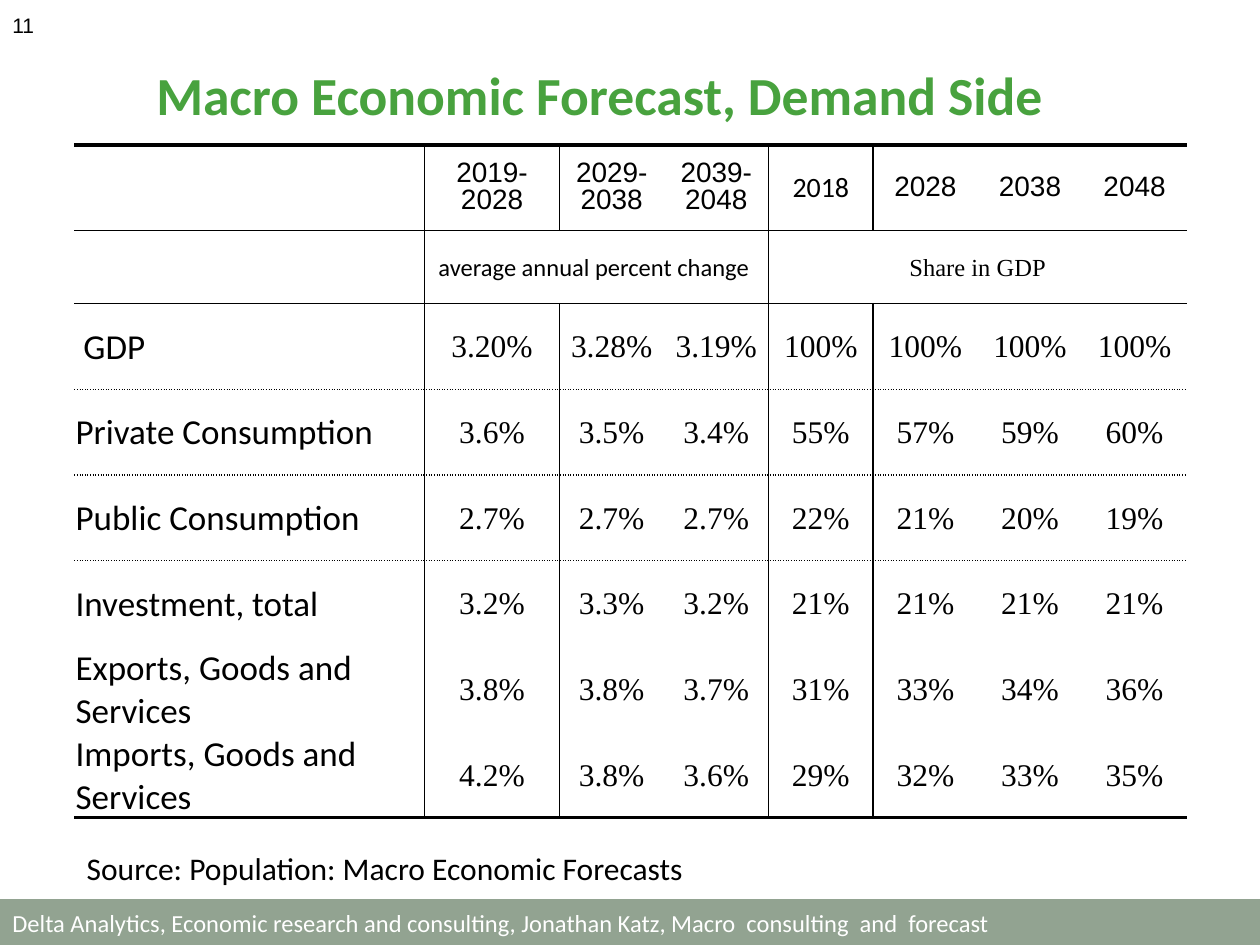
from lxml import etree
from pptx import Presentation
from pptx import util as u
from pptx.dml.color import RGBColor
from pptx.enum import shapes, text
from pptx.oxml.ns import qn

COLORS = {"ink": "000000", "title": "48A23E", "band": "92A391", "paper": "FFFFFF"}
SANS, SERIF = "Calibri", "Times New Roman"
NO_STYLE = "{2D5ABB26-0587-4C30-8999-92F81FD0307C}"
LEFT, CENTER = text.PP_ALIGN.LEFT, text.PP_ALIGN.CENTER

COLUMN_WIDTHS = [2.78, 1.07] + [0.83] * 6
ROW_HEIGHTS = [0.68, 0.58] + [0.68] * 6
PERIODS = ["2019-2028", "2029-2038", "2039-2048", "2018", "2028", "2038", "2048"]
FORECAST = [
    [" GDP", "3.20%", "3.28%", "3.19%", "100%", "100%", "100%", "100%"],
    ["Private Consumption", "3.6%", "3.5%", "3.4%", "55%", "57%", "59%", "60%"],
    ["Public Consumption", "2.7%", "2.7%", "2.7%", "22%", "21%", "20%", "19%"],
    ["Investment, total", "3.2%", "3.3%", "3.2%", "21%", "21%", "21%", "21%"],
    ["Exports, Goods and Services", "3.8%", "3.8%", "3.7%", "31%", "33%", "34%", "36%"],
    ["Imports, Goods and Services", "4.2%", "3.8%", "3.6%", "29%", "32%", "33%", "35%"],
]
# Horizontal rules by their position between rows: (points, dash)
RULES = {0: (2.25, "solid"), 1: (1, "solid"), 2: (1, "solid"),
         3: (1, "sysDot"), 4: (1, "sysDot"), 8: (2.25, "solid")}
DIVIDERS = {1, 4}


class ForecastSlide:
    def __init__(self, presentation):
        self.width = presentation.slide_width
        self.height = presentation.slide_height
        self.slide = presentation.slides.add_slide(presentation.slide_layouts[5])

    def box(self, left, top, width, height):
        """Turn shares of the slide's size into lengths."""
        return (int(left * self.width), int(top * self.height),
                int(width * self.width), int(height * self.height))

    def set_text(self, frame, content, size, font=SANS, color="ink", align=LEFT,
                 bold=False, right_to_left=False):
        frame.text = content
        paragraph = frame.paragraphs[0]
        paragraph.alignment = align
        for run in paragraph.runs:
            run.font.size = u.Pt(size)
            run.font.name = font
            run.font.bold = bold
            run.font.color.rgb = RGBColor.from_string(COLORS[color])
            if right_to_left:
                etree.SubElement(run.font._element, qn("a:cs"), typeface="Arial")
        if right_to_left:
            paragraph._p.get_or_add_pPr().set("rtl", "1")

    def title(self, content, *place):
        shape = self.slide.shapes.title
        shape.left, shape.top, shape.width, shape.height = self.box(*place)
        shape.text_frame.vertical_anchor = text.MSO_ANCHOR.MIDDLE
        self.set_text(shape.text_frame, content, 30.6, color="title", bold=True)

    def label(self, content, size, *place, anchor=text.MSO_ANCHOR.TOP, **style):
        frame = self.slide.shapes.add_textbox(*self.box(*place)).text_frame
        frame.word_wrap = True
        frame.vertical_anchor = anchor
        self.set_text(frame, content, size, **style)

    def band(self, content, *place):
        shape = self.slide.shapes.add_shape(shapes.MSO_SHAPE.RECTANGLE, *self.box(*place))
        shape.shadow.inherit = False
        shape.fill.solid()
        shape.fill.fore_color.rgb = RGBColor.from_string(COLORS["band"])
        shape.line.color.rgb = RGBColor.from_string(COLORS["band"])
        shape.line.width = u.Pt(2)
        shape.text_frame.vertical_anchor = text.MSO_ANCHOR.MIDDLE
        self.set_text(shape.text_frame, content, 14, color="paper")

    def table(self, *place):
        frame = self.slide.shapes.add_table(
            len(ROW_HEIGHTS), len(COLUMN_WIDTHS), *self.box(*place))
        table = frame.table
        table.first_row = table.horz_banding = False
        frame._element.xpath(".//a:tableStyleId")[0].text = NO_STYLE
        for column, width in zip(table.columns, COLUMN_WIDTHS):
            column.width = u.Inches(width)
        for row, height in zip(table.rows, ROW_HEIGHTS):
            row.height = u.Inches(height)
        for row in range(len(ROW_HEIGHTS)):
            for column in range(len(COLUMN_WIDTHS)):
                self.format_cell(table.cell(row, column), row, column)
        return table

    def format_cell(self, cell, row, column):
        cell.vertical_anchor = text.MSO_ANCHOR.MIDDLE
        cell.margin_left = cell.margin_right = cell.margin_top = u.Inches(0.01)
        cell.margin_bottom = 0
        if 2 <= row <= 3 and column >= 5:
            cell.fill.solid()
            cell.fill.fore_color.rgb = RGBColor.from_string(COLORS["paper"])
        else:
            cell.fill.background()
        divider = (1, "solid")
        borders = {"lnL": divider if column in DIVIDERS else None,
                   "lnR": divider if column + 1 in DIVIDERS else None,
                   "lnT": RULES.get(row), "lnB": RULES.get(row + 1)}
        if row == 1 and column == 1:  # the merged heading ends at a divider
            borders["lnR"] = divider
        drawn = [(side, rule) for side, rule in borders.items() if rule]
        properties = cell._tc.get_or_add_tcPr()
        for position, (side, (points, dash)) in enumerate(drawn):
            line = etree.Element(qn("a:" + side), w=str(int(u.Pt(points))))
            fill = etree.SubElement(line, qn("a:solidFill"))
            etree.SubElement(fill, qn("a:srgbClr"), val=COLORS["ink"])
            etree.SubElement(line, qn("a:prstDash"), val=dash)
            properties.insert(position, line)

    def fill_table(self, table):
        for column, period in enumerate(PERIODS, 1):
            frame = table.cell(0, column).text_frame
            self.set_text(frame, period, 16, align=CENTER, right_to_left=period != "2018")
            frame.paragraphs[0].line_spacing = 0.87
        for first, last, heading, font in [
                (1, 3, "average annual percent change ", SANS),
                (4, 7, "Share in GDP", SERIF)]:
            cell = table.cell(1, first)
            cell.merge(table.cell(1, last))
            self.set_text(cell.text_frame, heading, 14, font, align=CENTER)
        for row, (name, *values) in enumerate(FORECAST, 2):
            self.set_text(table.cell(row, 0).text_frame, name, 20)
            for column, value in enumerate(values, 1):
                self.set_text(table.cell(row, column).text_frame, value, 18, SERIF,
                              align=CENTER)


def main():
    presentation = Presentation()
    presentation.slide_width, presentation.slide_height = u.Inches(10), u.Inches(7.5)
    page = ForecastSlide(presentation)
    page.band("Delta Analytics, Economic research and consulting, Jonathan Katz, "
              "Macro  consulting  and  forecast", 0, 7.15 / 7.5, 1, 0.34 / 7.5)
    page.title("Macro Economic Forecast, Demand Side", 0.114, 0.02, 0.8, 0.16)
    page.label("11", 12, 0, 0, 0.23, 0.4 / 7.5,
               anchor=text.MSO_ANCHOR.MIDDLE, right_to_left=True)
    page.fill_table(page.table(0.059, 1.15 / 7.5, 0.882, 5.32 / 7.5))
    page.label("Source: Population: Macro Economic Forecasts", 18,
               0.059, 6.69 / 7.5, 0.85, 0.4 / 7.5)
    presentation.save("out.pptx")


if __name__ == "__main__":
    main()
